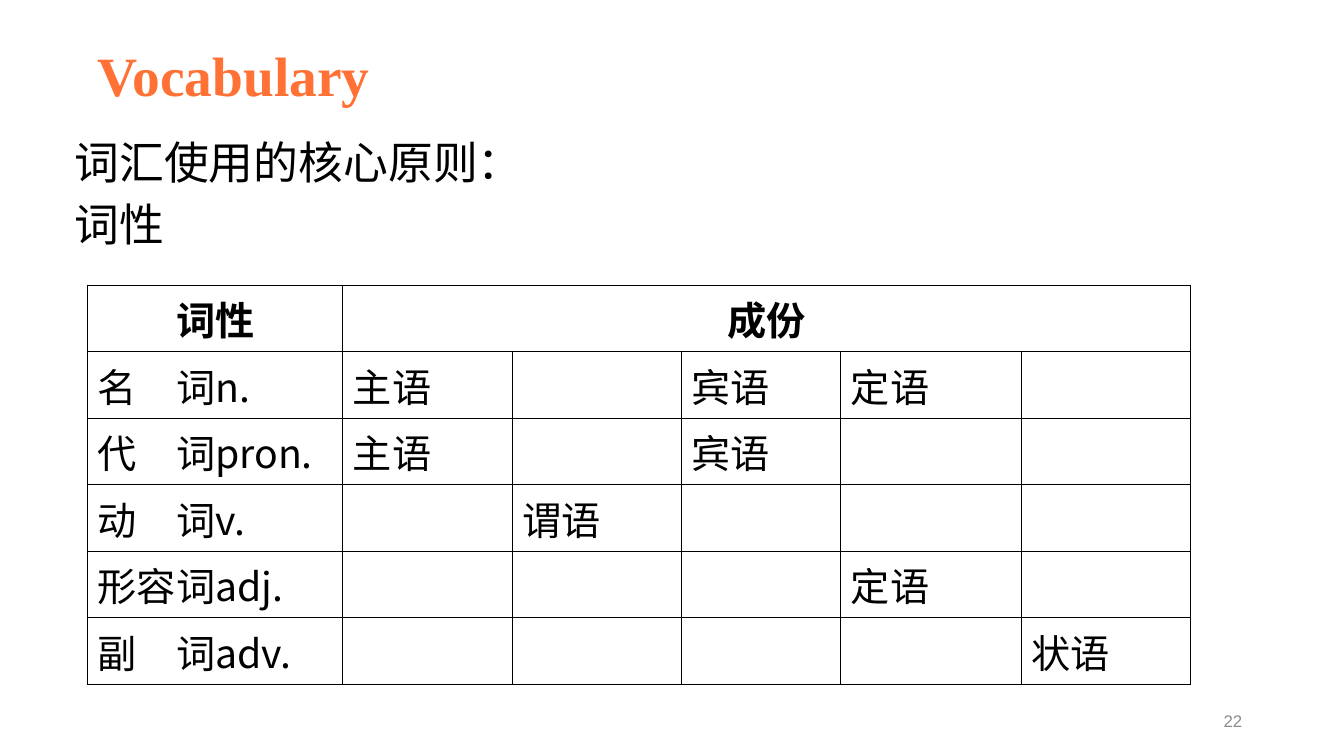
"""Build the vocabulary slide with its table of word classes."""
from dataclasses import dataclass

from lxml.etree import SubElement
from pptx import Presentation
from pptx.dml.color import RGBColor
from pptx.enum.text import MSO_ANCHOR, PP_ALIGN
from pptx.oxml.ns import qn
from pptx.util import Inches, Pt

ORANGE = RGBColor(0xFF, 0x71, 0x35)
BLACK = RGBColor(0, 0, 0)
GRAY = RGBColor(0x8C, 0x8C, 0x8C)
CJK = "Noto Sans CJK SC"

COL_WIDTHS = (2.53, 1.68, 1.68, 1.58, 1.79, 1.68)
ROW_HEIGHT = 0.66
ROLES = ("主语", "谓语", "宾语", "定语", "状语")


@dataclass(frozen=True)
class WordClass:
    label: str
    roles: tuple[str, ...]


@dataclass(frozen=True)
class Box:
    left: float
    top: float
    width: float
    height: float
    anchor: MSO_ANCHOR = MSO_ANCHOR.TOP


WORD_CLASSES = (
    WordClass("名　词n.", ("主语", "宾语", "定语")),
    WordClass("代　词pron.", ("主语", "宾语")),
    WordClass("动　词v.", ("谓语",)),
    WordClass("形容词adj.", ("定语",)),
    WordClass("副　词adv.", ("状语",)),
)


def write(tf, *lines: str, size: float, font: str = CJK, color: RGBColor = BLACK,
          bold: bool = False, align: PP_ALIGN = PP_ALIGN.LEFT,
          spacing: float = 1.0, before: float = 0) -> None:
    for i, line in enumerate(lines):
        p = tf.add_paragraph() if i else tf.paragraphs[0]
        p.alignment = align
        p.line_spacing = spacing
        if i:
            p.space_before = Pt(before)
        r = p.add_run()
        r.text = line
        r.font.size = Pt(size)
        r.font.bold = bold
        r.font.name = font
        r.font.color.rgb = color
        SubElement(r.font._element, qn("a:ea"), typeface=font)


def add_text(s, box: Box, *lines: str, **fmt) -> None:
    sp = s.shapes.add_textbox(Inches(box.left), Inches(box.top),
                              Inches(box.width), Inches(box.height))
    tf = sp.text_frame
    tf.word_wrap = True
    tf.vertical_anchor = box.anchor
    write(tf, *lines, **fmt)


def add_borders(cell) -> None:
    tc_pr = cell._tc.get_or_add_tcPr()
    for side in ("a:lnL", "a:lnR", "a:lnT", "a:lnB"):
        ln = SubElement(tc_pr, qn(side), w=str(Pt(1)))
        fill = SubElement(ln, qn("a:solidFill"))
        SubElement(fill, qn("a:srgbClr"), val=str(BLACK))


def add_word_table(s) -> None:
    n_rows = len(WORD_CLASSES) + 1
    frame = s.shapes.add_table(n_rows, len(COL_WIDTHS), Inches(0.87), Inches(2.83),
                               Inches(sum(COL_WIDTHS)), Inches(ROW_HEIGHT * n_rows))
    table = frame.table
    table.first_row = table.horz_banding = False
    for col, width in zip(table.columns, COL_WIDTHS):
        col.width = Inches(width)
    for row in table.rows:
        row.height = Inches(ROW_HEIGHT)
    for cell in table.iter_cells():
        add_borders(cell)
        cell.fill.background()
    table.cell(0, 1).merge(table.cell(0, len(ROLES)))
    for c, heading in enumerate(("词性", "成份")):
        write(table.cell(0, c).text_frame, heading, size=28, bold=True,
              align=PP_ALIGN.CENTER)
    for r, word in enumerate(WORD_CLASSES, 1):
        write(table.cell(r, 0).text_frame, word.label, size=28)
        for role in word.roles:
            write(table.cell(r, ROLES.index(role) + 1).text_frame, role, size=28)


def main() -> None:
    prs = Presentation()
    prs.slide_width, prs.slide_height = Inches(13.33), Inches(7.5)
    s = prs.slides.add_slide(prs.slide_layouts[6])
    add_text(s, Box(0.87, 0.46, 8, 0.64, MSO_ANCHOR.MIDDLE), "Vocabulary",
             size=39.6, font="Times New Roman", color=ORANGE, bold=True, spacing=0.9)
    add_text(s, Box(0.64, 1.29, 11.54, 5.75), "词汇使用的核心原则：", "词性",
             size=32, before=6)
    add_text(s, Box(9.42, 6.95, 3, 0.4, MSO_ANCHOR.MIDDLE), "22",
             size=12, font="Arial", color=GRAY, align=PP_ALIGN.RIGHT)
    add_word_table(s)
    prs.save("out.pptx")


if __name__ == "__main__":
    main()
